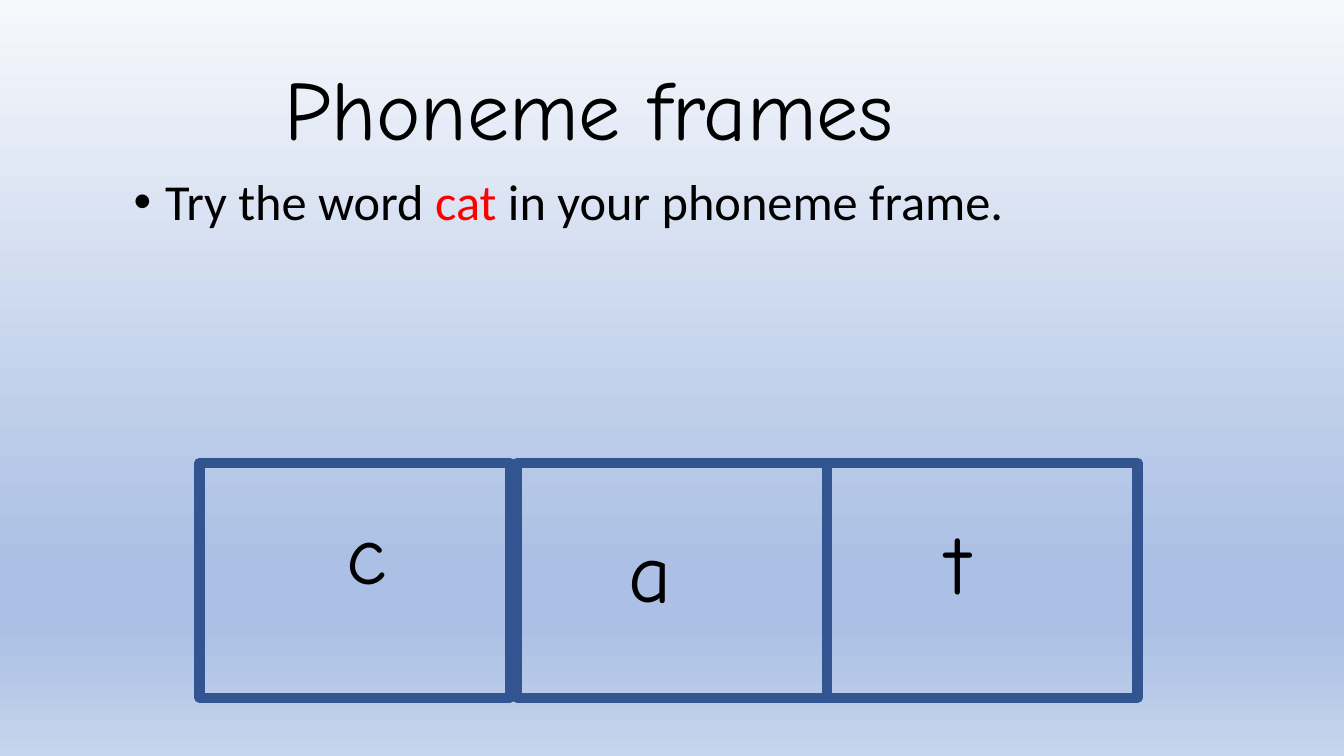
"""Build a slide that shows the word cat in a three-part phoneme frame."""
import copy
from typing import NamedTuple, Optional

import lxml.etree
import pptx
import pptx.dml.color
import pptx.enum.shapes
import pptx.enum.text
import pptx.oxml.ns
import pptx.slide
import pptx.util
from pptx.util import Cm

COLOURS = {
    "text": "000000",
    "highlight": "FF0000",
    "frame": "325491",
    "sky top": "F6F8FC",
    "sky deep": "ABC0E4",
    "sky bottom": "C7D5ED",
}
BACKGROUND_STOPS = [(0, "sky top"), (0.74, "sky deep"), (0.83, "sky deep"), (1, "sky bottom")]
LETTER_FORMAT = {"name": "Comic Neue", "size": pptx.util.Pt(60)}
BODY_FORMAT = {"name": "Calibri", "size": pptx.util.Pt(36)}
FRAME_TOP, FRAME_WIDTH, FRAME_HEIGHT = 11.66, 7.82, 5.92
LETTER_WIDTH, LETTER_HEIGHT = 4.65, 2.82


class TextBox(NamedTuple):
    left: float
    top: float
    width: float
    height: float
    runs: list[tuple[str, str]]
    font_format: dict
    alignment: Optional[pptx.enum.text.PP_ALIGN] = None
    bulleted: bool = False


class Phoneme(NamedTuple):
    letter: str
    frame_left: float
    letter_left: float
    letter_top: float


PHONEMES = [
    Phoneme("c", 5.03, 6.91, 12.5),
    Phoneme("a", 13.03, 14.05, 12.93),
    Phoneme("t", 13.03 + FRAME_WIDTH, 21.84, 12.73),
]
HEADINGS = [
    TextBox(6.91, 1.3, 22.71, 5.38, [("Phoneme frames", "text")], LETTER_FORMAT),
    TextBox(
        3.12, 4.17, 27.51, 1.8,
        [("Try the word ", "text"), ("cat", "highlight"), (" in your phoneme frame.", "text")],
        BODY_FORMAT, bulleted=True,
    ),
]


def colour(name: str) -> pptx.dml.color.RGBColor:
    """Return the named colour."""
    return pptx.dml.color.RGBColor.from_string(COLOURS[name])


def set_attributes(target: object, values: dict) -> None:
    """Set each format value on the target."""
    for name, value in values.items():
        setattr(target, name, value)


def paint_background(slide: pptx.slide.Slide) -> None:
    """Fill the slide with a vertical gradient."""
    fill = slide.background.fill
    fill.gradient()
    fill.gradient_angle = 270
    stop_list = next(slide.element.iter(pptx.oxml.ns.qn("a:gsLst")))
    while len(stop_list) < len(BACKGROUND_STOPS):
        stop_list.append(copy.deepcopy(stop_list[0]))
    for stop, (position, name) in zip(fill.gradient_stops, BACKGROUND_STOPS):
        stop.color.rgb = colour(name)
        stop.position = position


def add_bullet(paragraph) -> None:
    """Give the paragraph a hanging round bullet."""
    properties = paragraph._p.get_or_add_pPr()
    properties.set("marL", str(Cm(0.79)))
    properties.set("indent", str(-Cm(0.79)))
    for tag, name, value in [("a:buFont", "typeface", "Arial"), ("a:buChar", "char", "•")]:
        lxml.etree.SubElement(properties, pptx.oxml.ns.qn(tag)).set(name, value)


def draw_text(slide: pptx.slide.Slide, box: TextBox) -> None:
    """Draw one text box with its coloured runs."""
    shape = slide.shapes.add_textbox(Cm(box.left), Cm(box.top), Cm(box.width), Cm(box.height))
    set_attributes(shape.text_frame, {
        "word_wrap": True,
        "auto_size": pptx.enum.text.MSO_AUTO_SIZE.SHAPE_TO_FIT_TEXT,
    })
    paragraph = shape.text_frame.paragraphs[0]
    paragraph.alignment = box.alignment
    if box.bulleted:
        add_bullet(paragraph)
    for text, name in box.runs:
        run = paragraph.add_run()
        run.text = text
        set_attributes(run.font, box.font_format)
        run.font.color.rgb = colour(name)


def draw_frame(slide: pptx.slide.Slide, phoneme: Phoneme) -> None:
    """Draw the empty frame of one phoneme."""
    shape = slide.shapes.add_shape(
        pptx.enum.shapes.MSO_SHAPE.RECTANGLE,
        Cm(phoneme.frame_left), Cm(FRAME_TOP), Cm(FRAME_WIDTH), Cm(FRAME_HEIGHT),
    )
    shape.shadow.inherit = False
    shape.fill.background()
    shape.line.color.rgb = colour("frame")
    shape.line.width = pptx.util.Pt(7.25)


def main() -> None:
    """Build and save the presentation."""
    presentation = pptx.Presentation()
    set_attributes(presentation, {"slide_width": Cm(33.87), "slide_height": Cm(19.05)})
    slide = presentation.slides.add_slide(presentation.slide_layouts[6])
    paint_background(slide)
    for heading in HEADINGS:
        draw_text(slide, heading)
    for phoneme in PHONEMES:
        draw_frame(slide, phoneme)
    for phoneme in PHONEMES:
        draw_text(slide, TextBox(
            phoneme.letter_left, phoneme.letter_top, LETTER_WIDTH, LETTER_HEIGHT,
            [(phoneme.letter, "text")], LETTER_FORMAT, pptx.enum.text.PP_ALIGN.CENTER,
        ))
    presentation.save("out.pptx")


if __name__ == "__main__":
    main()
